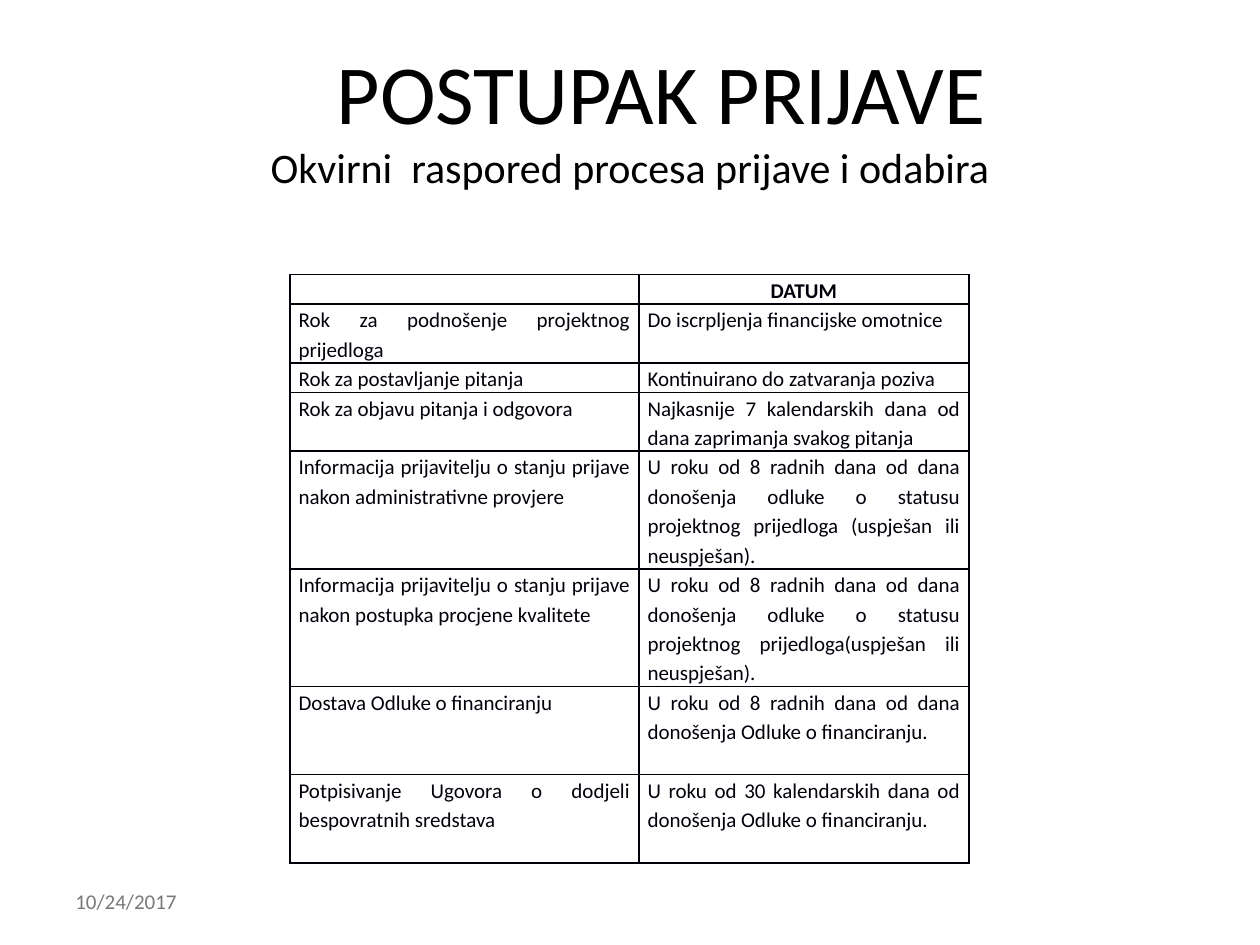
from lxml import etree
from pptx import Presentation
from pptx.dml.color import RGBColor
from pptx.enum import text
from pptx.oxml import ns
from pptx.util import Inches, Pt

FONT = "Calibri"
COLORS = {"title": "000000", "table": "00000A", "date": "777877", "cell": "FFFFFF"}
LINE_HEIGHT = 4.67 / 20  # one 12 pt line at 1.15 spacing

# Left text, right text, height in lines
ROWS = [
    ("", "DATUM", 1),
    ("Rok za podnošenje projektnog prijedloga", "Do iscrpljenja financijske omotnice", 2),
    ("Rok za postavljanje pitanja", "Kontinuirano do zatvaranja poziva", 1),
    ("Rok za objavu pitanja i odgovora",
     "Najkasnije 7 kalendarskih dana od dana zaprimanja svakog pitanja", 2),
    ("Informacija prijavitelju o stanju prijave nakon administrativne provjere",
     "U roku od 8 radnih dana od dana donošenja odluke o statusu projektnog "
     "prijedloga (uspješan ili neuspješan).", 4),
    ("Informacija prijavitelju o stanju prijave nakon postupka procjene kvalitete",
     "U roku od 8 radnih dana od dana donošenja odluke o statusu projektnog "
     "prijedloga(uspješan ili neuspješan).", 4),
    ("Dostava Odluke o financiranju",
     "U roku od 8 radnih dana od dana donošenja Odluke o financiranju.", 3),
    ("Potpisivanje Ugovora o dodjeli bespovratnih sredstava",
     "U roku od 30 kalendarskih dana od donošenja Odluke o financiranju.", 3),
]


def add_run(p, words, size, color, bold=False):
    r = p.add_run()
    r.text = words
    r.font.name = FONT
    r.font.size = Pt(size)
    r.font.bold = bold
    r.font.color.rgb = RGBColor.from_string(COLORS[color])


def add_box(s, left, top, width, height):
    tf = s.shapes.add_textbox(Inches(left), Inches(top), Inches(width), Inches(height)).text_frame
    tf.word_wrap = True
    tf.vertical_anchor = text.MSO_ANCHOR.MIDDLE
    return tf.paragraphs[0]


def add_borders(cell):
    tc_pr = cell._tc.get_or_add_tcPr()
    for i, side in enumerate(("lnL", "lnR", "lnT", "lnB")):
        ln = etree.Element(ns.qn("a:" + side), w=str(Pt(1)))
        fill = etree.SubElement(ln, ns.qn("a:solidFill"))
        etree.SubElement(fill, ns.qn("a:srgbClr"), val=COLORS["table"])
        tc_pr.insert(i, ln)  # borders come before the fill


def fill_cell(cell, words, header):
    cell.margin_left = cell.margin_right = Inches(0.07)
    cell.margin_top = cell.margin_bottom = 0
    cell.fill.solid()
    cell.fill.fore_color.rgb = RGBColor.from_string(COLORS["cell"])
    add_borders(cell)
    p = cell.text_frame.paragraphs[0]
    p.alignment = text.PP_ALIGN.CENTER if header else text.PP_ALIGN.JUSTIFY
    p.line_spacing = 1.15
    if words:
        add_run(p, words, 12, "table", header)
    else:  # keeps the empty cell one line high
        etree.SubElement(p._p, ns.qn("a:endParaRPr"), sz="1200")


def add_schedule(s):
    height = LINE_HEIGHT * sum(row[2] for row in ROWS)
    table = s.shapes.add_table(len(ROWS), 2, Inches(2.3), Inches(2.18),
                               Inches(5.39), Inches(height)).table
    table.horz_banding = False
    table.first_row = False
    for column, width in zip(table.columns, (2.77, 2.62)):
        column.width = Inches(width)
    for i, (step, deadline, lines) in enumerate(ROWS):
        table.rows[i].height = Inches(LINE_HEIGHT * lines)
        for j, words in enumerate((step, deadline)):
            fill_cell(table.cell(i, j), words, header=i == 0)


def main():
    prs = Presentation()
    prs.slide_width, prs.slide_height = Inches(10), Inches(7.5)
    s = prs.slides.add_slide(prs.slide_layouts[6])

    # Date
    add_run(add_box(s, 0.5, 6.95, 2.33, 0.4), "10/24/2017", 12, "date")

    # Title and subtitle
    p = add_box(s, 0.5, 0.3, 9, 1.25)
    p.alignment = text.PP_ALIGN.CENTER
    add_run(p, "\tPOSTUPAK PRIJAVE", 48, "title")
    p.add_line_break()
    add_run(p, "Okvirni  raspored procesa prijave i odabira", 24, "title")

    # Schedule
    add_schedule(s)
    prs.save("out.pptx")


if __name__ == "__main__":
    main()
